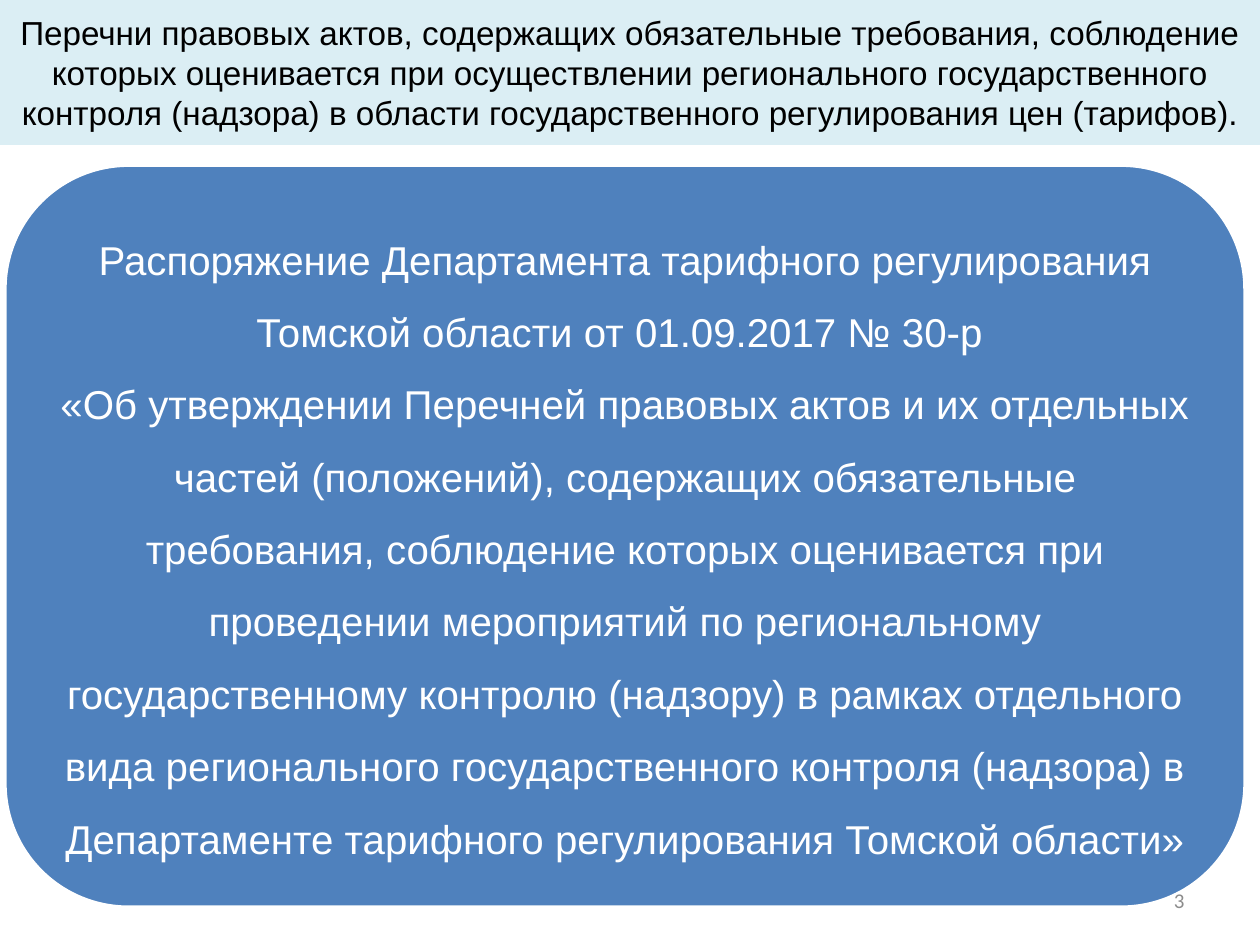
from pptx import Presentation
from pptx.dml.color import RGBColor
from pptx.enum.shapes import MSO_SHAPE
from pptx.enum.text import MSO_ANCHOR, PP_ALIGN
from pptx.util import Cm, Pt

RECTANGLE = MSO_SHAPE.RECTANGLE
ROUNDED = MSO_SHAPE.ROUNDED_RECTANGLE
MIDDLE = MSO_ANCHOR.MIDDLE
CENTER = PP_ALIGN.CENTER
RIGHT = PP_ALIGN.RIGHT

TITLE = (
    "Перечни правовых актов, содержащих обязательные требования, соблюдение "
    "которых оценивается при осуществлении регионального государственного "
    "контроля (надзора) в области государственного регулирования цен (тарифов)."
)
# \v is a line break within the paragraph
ORDER = (
    "Распоряжение Департамента тарифного регулирования Томской области "
    "от 01.09.2017 № 30-р \v"
    "«Об утверждении Перечней правовых актов и их отдельных частей (положений), "
    "содержащих обязательные требования, соблюдение которых оценивается при "
    "проведении мероприятий по региональному государственному контролю (надзору) "
    "в рамках отдельного вида регионального государственного контроля (надзора) "
    "в Департаменте тарифного регулирования Томской области»"
)


def color(value):
    return RGBColor.from_string(value)


def lengths(box):
    return [Cm(value) for value in box]


def add_panel(slide, kind, box, fill, line=None):
    shape = slide.shapes.add_shape(kind, *lengths(box))
    shape.shadow.inherit = False
    shape.fill.solid()
    shape.fill.fore_color.rgb = color(fill)
    if line:
        shape.line.color.rgb = color(line)
        shape.line.width = Pt(2)
    else:
        shape.line.fill.background()
    return shape


def write(shape, text, font, text_color, layout):
    """Fill a shape with one paragraph; font and layout are attribute values."""
    frame = shape.text_frame
    frame.word_wrap = True
    frame.vertical_anchor = MIDDLE
    paragraph = frame.paragraphs[0]
    paragraph.text = text
    for name, value in layout.items():
        setattr(paragraph, name, value)
    for run in paragraph.runs:
        for name, value in font.items():
            setattr(run.font, name, value)
        run.font.color.rgb = color(text_color)


def add_text(slide, box, *content):
    text_box = slide.shapes.add_textbox(*lengths(box))
    write(text_box, *content)
    return text_box


def main():
    presentation = Presentation()
    presentation.slide_width = Cm(25.4)
    presentation.slide_height = Cm(19.05)
    slide = presentation.slides.add_slide(presentation.slide_layouts[6])

    title = add_panel(slide, RECTANGLE, (0, 0, 25.4, 2.92), "DBEEF4")
    write(title, TITLE, {"size": Pt(19), "name": "Arial"}, "000000",
          {"alignment": CENTER})

    add_panel(slide, ROUNDED, (0.1, 3.33, 25, 14.96), "4F81BD", "FFFFFF")
    order = add_text(slide, (0.84, 4.06, 23.55, 13.51), ORDER,
                     {"size": Pt(23), "name": "Arial"}, "FFFFFF",
                     {"alignment": CENTER, "line_spacing": 1.5})
    for side in ("left", "top", "right", "bottom"):
        setattr(order.text_frame, f"margin_{side}", Cm(0.25))

    add_text(slide, (18.2, 17.65, 5.93, 1.01), "3",
             {"size": Pt(12), "name": "Calibri"}, "8C8C8C", {"alignment": RIGHT})

    presentation.save("out.pptx")


if __name__ == "__main__":
    main()
